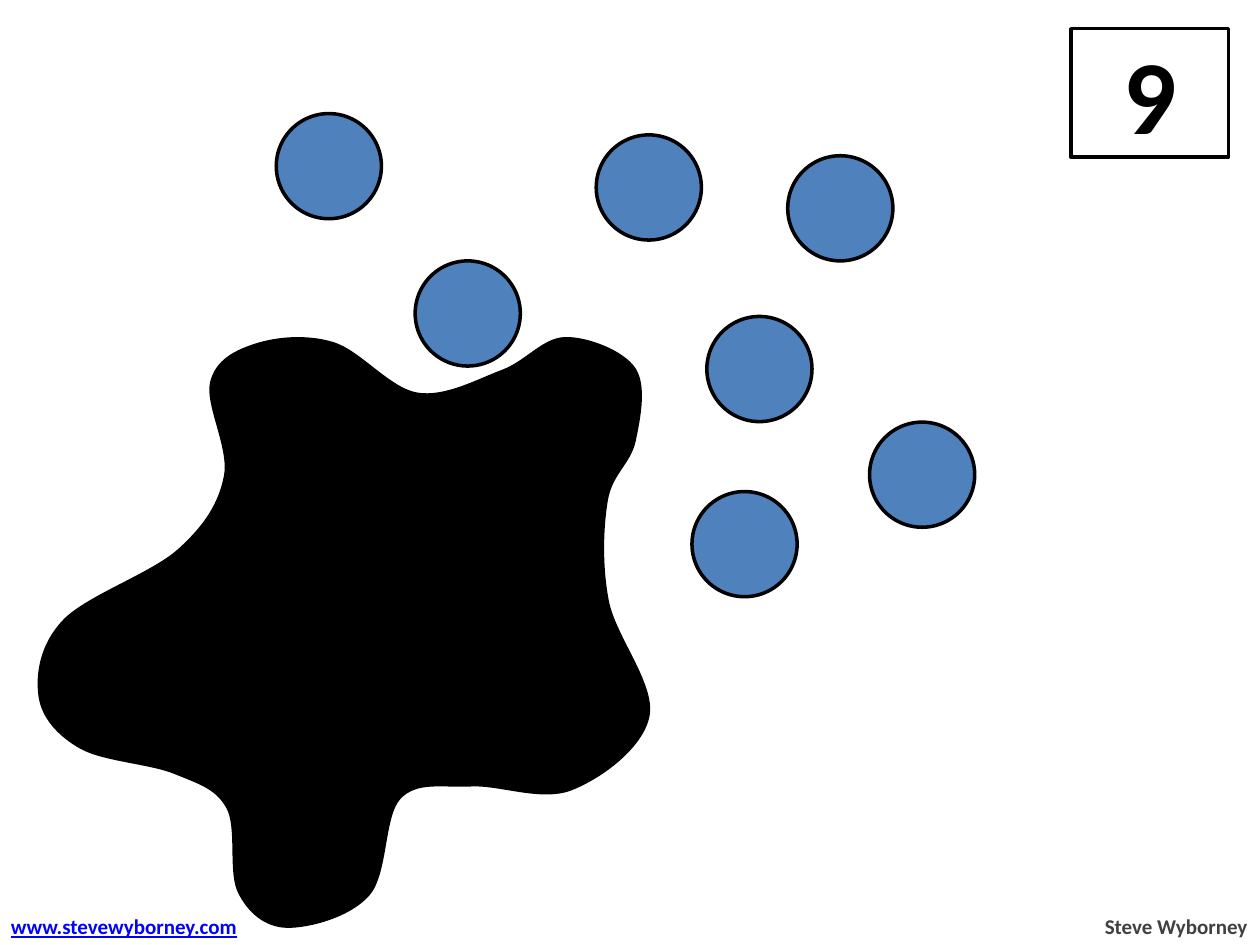
"""Build a counting slide with blue dots, an ink blot and a total."""
from lxml.etree import SubElement
from pptx import Presentation
from pptx.dml.color import RGBColor
from pptx.enum.shapes import MSO_SHAPE
from pptx.enum.text import MSO_ANCHOR, MSO_AUTO_SIZE, PP_ALIGN
from pptx.oxml.ns import qn
from pptx.util import Cm, Pt

BLACK = RGBColor(0x00, 0x00, 0x00)
WHITE = RGBColor(0xFF, 0xFF, 0xFF)
BLUE = RGBColor(0x4F, 0x81, 0xBD)
GRAY = RGBColor(0x40, 0x40, 0x40)
LINK = RGBColor(0x00, 0x00, 0xFF)

BASE = {"name": "Calibri", "bold": True}
SMALL = {**BASE, "size": Pt(12)}
LARGE = {**BASE, "size": Pt(60)}
FRAME = {"word_wrap": False, "auto_size": MSO_AUTO_SIZE.SHAPE_TO_FIT_TEXT}

DOT = 2.12
DOTS = [(5.57, 2.29), (12.02, 2.72), (14.25, 6.38), (15.88, 3.14), (8.37, 5.26),
        (5.44, 7.37), (9.91, 8.86), (13.95, 9.91), (17.53, 8.51)]
BLOT = [(1.63, 15.06), (0.81, 14.02), (1.3, 12.52), (3.61, 11.1),
        (4.55, 9.6), (4.27, 7.72), (5.16, 6.96), (6.71, 6.93),
        (8.41, 7.95), (10.13, 7.49), (11.4, 6.83), (12.78, 7.44),
        (12.78, 8.89), (12.22, 10.08), (12.24, 12.12), (13.06, 14.43),
        (11.51, 15.9), (9.5, 15.82), (8.05, 16.08), (7.42, 18.03),
        (5.79, 18.67), (4.83, 17.98), (4.6, 16.28), (3.53, 15.57)]


def apply(item, style):
    for key, value in style.items():
        setattr(item, key, value)


def paint(shape, fill):
    shape.shadow.inherit = False
    shape.fill.solid()
    shape.fill.fore_color.rgb = fill
    shape.line.color.rgb = BLACK
    shape.line.width = Pt(2)


def write(frame, text, style, color, align):
    para = frame.paragraphs[0]
    para.alignment = align
    run = para.add_run()
    run.text = text
    apply(run.font, style)
    run.font.color.rgb = color


def add_shape(slide, kind, box, fill):
    shape = slide.shapes.add_shape(kind, *map(Cm, box))
    paint(shape, fill)
    return shape


def add_label(slide, box, text, style, color, align):
    frame = slide.shapes.add_textbox(*map(Cm, box)).text_frame
    apply(frame, FRAME)
    write(frame, text, style, color, align)


def lean(knot, back, ahead):
    """Return the curve handle of a knot, parallel to its neighbours."""
    return tuple(round(k + (a - b) / 6) for k, b, a in zip(knot, back, ahead))


def smooth(shape):
    """Turn the straight sides of a closed outline into curves."""
    sides = list(shape.element.iter(qn("a:lnTo")))
    ends = [(int(pt.get("x")), int(pt.get("y"))) for side in sides for pt in side]
    count = len(ends)
    for spot, side in enumerate(sides):
        before, start, end, after = (ends[(spot + step) % count]
                                     for step in (-2, -1, 0, 1))
        outline = side.getparent()
        bend = SubElement(outline, qn("a:cubicBezTo"))
        for x, y in (lean(start, before, end), lean(end, after, start), end):
            SubElement(bend, qn("a:pt"), x=str(x), y=str(y))
        outline.replace(side, bend)


def add_blot(slide, knots):
    first, *rest = [tuple(map(Cm, knot)) for knot in knots]
    pen = slide.shapes.build_freeform(*first, scale=1.0)
    pen.add_line_segments([*rest, first], close=True)
    shape = pen.convert_to_shape()
    smooth(shape)
    paint(shape, BLACK)


def main():
    deck = Presentation()
    deck.slide_width, deck.slide_height = Cm(25.4), Cm(19.05)
    slide = deck.slides.add_slide(deck.slide_layouts[6])
    for left, top in DOTS:
        add_shape(slide, MSO_SHAPE.OVAL, (left, top, DOT, DOT), BLUE)
    add_label(slide, (22, 18.29, 3.4, 0.76), "Steve Wyborney",
              SMALL, GRAY, PP_ALIGN.RIGHT)
    card = add_shape(slide, MSO_SHAPE.RECTANGLE, (21.59, 0.58, 3.18, 2.59), WHITE)
    card.text_frame.vertical_anchor = MSO_ANCHOR.MIDDLE
    write(card.text_frame, "9", LARGE, BLACK, PP_ALIGN.CENTER)
    add_label(slide, (-0.03, 18.29, 5.2, 0.76), "www.stevewyborney.com",
              {**SMALL, "underline": True}, LINK, PP_ALIGN.LEFT)
    add_blot(slide, BLOT)
    deck.save("out.pptx")


if __name__ == "__main__":
    main()
